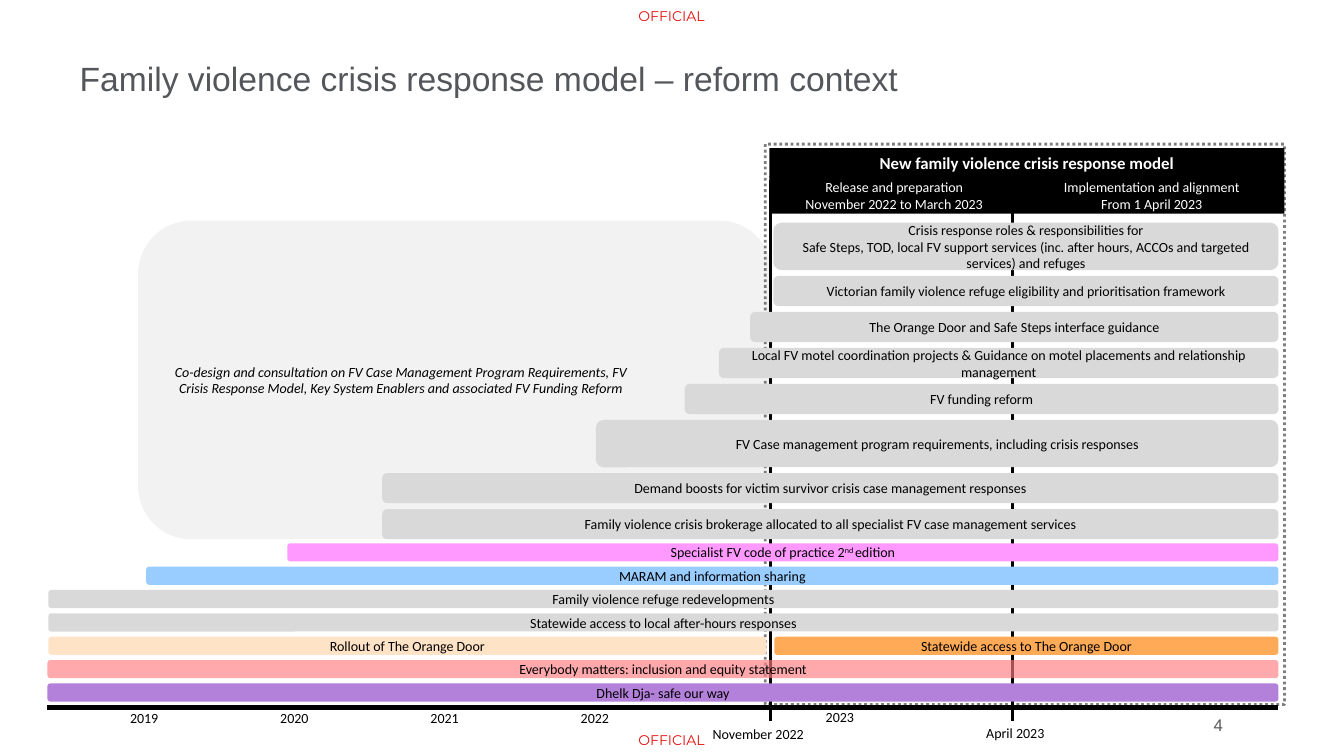
from lxml import etree
from pptx import Presentation
from pptx.dml.color import RGBColor
from pptx.enum.dml import MSO_LINE
from pptx.enum.shapes import MSO_CONNECTOR, MSO_SHAPE
from pptx.enum.text import MSO_ANCHOR, PP_ALIGN
from pptx.oxml.ns import qn
from pptx.util import Inches, Pt

RECT, ROUNDED = MSO_SHAPE.RECTANGLE, MSO_SHAPE.ROUNDED_RECTANGLE
STRAIGHT = MSO_CONNECTOR.STRAIGHT
DOTTED = MSO_LINE.ROUND_DOT
MIDDLE, TOP = MSO_ANCHOR.MIDDLE, MSO_ANCHOR.TOP
LEFT, CENTER, RIGHT = PP_ALIGN.LEFT, PP_ALIGN.CENTER, PP_ALIGN.RIGHT

COLORS = {
    "black": "000000", "white": "FFFFFF", "title": "53565A", "number": "595959",
    "official": "E4100E", "panel": "F2F2F2", "grey": "D9D9D9", "pink": "FF99FF",
    "blue": "99CCFF", "peach": "FFE3C7", "orange": "FFAA56", "red": "FF7C80",
    "purple": "B381D9",
}
BAR_RIGHT = 12.68
NOVEMBER, APRIL = 7.64, 10.04

# Each row is (height, bars); each bar is (left, right, colour, paragraphs)
REFORM_ROWS = [
    (0.47, [(7.67, BAR_RIGHT, "grey", [
        "Crisis response roles & responsibilities for",
        "Safe Steps, TOD, local FV support services (inc. after hours, "
        "ACCOs and targeted services) and refuges"])]),
    (0.3, [(7.67, BAR_RIGHT, "grey", [
        "Victorian family violence refuge eligibility and prioritisation framework"])]),
    (0.3, [(7.44, BAR_RIGHT, "grey", ["The Orange Door and Safe Steps interface guidance"])]),
    (0.3, [(7.13, BAR_RIGHT, "grey", [
        "Local FV motel coordination projects & Guidance on motel placements "
        "and relationship management"])]),
    (0.3, [(6.79, BAR_RIGHT, "grey", ["FV funding reform"])]),
    (0.47, [(5.91, BAR_RIGHT, "grey", [
        "FV Case management program requirements, including crisis responses"])]),
    (0.3, [(3.79, BAR_RIGHT, "grey", [
        "Demand boosts for victim survivor crisis case management responses"])]),
    (0.3, [(3.79, BAR_RIGHT, "grey", [
        "Family violence crisis brokerage allocated to all specialist FV "
        "case management services"])]),
]
FOUNDATION_ROWS = [
    (0.18, [(2.85, BAR_RIGHT, "pink", [
        ("Specialist FV code of practice 2", "^nd ", "edition")])]),
    (0.18, [(1.45, BAR_RIGHT, "blue", ["MARAM and information sharing"])]),
    (0.18, [(0.48, BAR_RIGHT, "grey", ["Family violence refuge redevelopments"])]),
    (0.18, [(0.48, BAR_RIGHT, "grey", ["Statewide access to local after-hours responses"])]),
    (0.18, [(0.48, 7.6, "peach", ["Rollout of The Orange Door"]),
            (7.68, BAR_RIGHT, "orange", ["Statewide access to The Orange Door"])]),
    (0.18, [(0.47, BAR_RIGHT, "red", ["Everybody matters: inclusion and equity statement"])]),
    (0.18, [(0.47, BAR_RIGHT, "purple", ["Dhelk Dja- safe our way"])]),
]


def rgb(name):
    return RGBColor.from_string(COLORS[name])


def set_alpha(paint, percent):
    """Make a solid fill or line partly transparent."""
    color = next(paint.iter(qn("a:srgbClr")))
    etree.SubElement(color, qn("a:alpha")).set("val", str(percent * 1000))


def write(shape, paragraphs, size=10, font="Calibri", color="black", bold=False,
          italic=False, align=CENTER, anchor=MIDDLE, insets=(0.1, 0.05, 0.1, 0.05)):
    """Fill a shape with text; a paragraph is a string or runs, "^" marks superscript."""
    frame = shape.text_frame
    frame.word_wrap = True
    frame.vertical_anchor = anchor
    (frame.margin_left, frame.margin_top,
     frame.margin_right, frame.margin_bottom) = map(Inches, insets)
    for index, runs in enumerate(paragraphs):
        para = frame.add_paragraph() if index else frame.paragraphs[0]
        para.alignment = align
        for text in (runs,) if isinstance(runs, str) else runs:
            span = para.add_run()
            span.text = text.lstrip("^")
            span.font.size = Pt(size)
            span.font.name = font
            span.font.bold, span.font.italic = bold, italic
            span.font.color.rgb = rgb(color)
            if text.startswith("^"):
                span.font._element.set("baseline", "30000")


def add_box(page, kind, left, top, width, height, fill=None):
    box = page.shapes.add_shape(kind, *map(Inches, (left, top, width, height)))
    box.shadow.inherit = False
    box.line.fill.background()
    if fill:
        box.fill.solid()
        box.fill.fore_color.rgb = rgb(fill)
    else:
        box.fill.background()
    return box


def add_line(page, x1, y1, x2, y2, weight):
    line = page.shapes.add_connector(STRAIGHT, *map(Inches, (x1, y1, x2, y2)))
    line.line.color.rgb = rgb("black")
    line.line.width = Pt(weight)
    etree.SubElement(line._element.spPr, qn("a:effectLst"))


def add_furniture(page):
    """Title, classification marks and page number."""
    title = page.shapes.title
    title.left, title.top, title.width, title.height = map(Inches, (0.79, 0.3, 11.76, 0.94))
    write(title, ["Family violence crisis response model – reform context"], 24,
          "Arial", "title", align=LEFT, insets=(0, 0, 0, 0))
    for top in (0, 7.19):
        mark = page.shapes.add_textbox(*map(Inches, (6.15, top, 1.02, 0.31)))
        write(mark, ["OFFICIAL"], 10, "Montserrat", "official", insets=(0, 0, 0, 0))
    number = page.shapes.add_textbox(*map(Inches, (11.42, 7.09, 0.71, 0.4)))
    write(number, ["4"], 12, "Arial", "number", align=RIGHT, anchor=TOP, insets=(0, 0, 0, 0))


def add_consultation_panel(page, left, top, width, height):
    panel = add_box(page, ROUNDED, left, top, width, height, "panel")
    write(panel, ["Co-design and consultation on FV Case Management Program Requirements, "
                  "FV Crisis Response Model, Key System Enablers and associated "
                  "FV Funding Reform"], italic=True, insets=(0.1, 0.05, 1.18, 0.05))


def add_timeline(page, left, top, right):
    """Axis with year labels and two dated milestone lines."""
    for milestone in (NOVEMBER, APRIL):
        add_line(page, milestone, 1.79, milestone, top + 0.13, 2)
    add_line(page, left, top, right, top, 4)
    labels = [(str(2019 + step), left + 0.96 + 1.49 * step, top + 0.1) for step in range(4)]
    labels += [("2023", 8.33, top + 0.09),
               ("November 2022", 7.52, top + 0.26), ("April 2023", 10.07, top + 0.25)]
    for text, center, middle in labels:
        write(add_box(page, ROUNDED, center - 0.57, middle - 0.06, 1.14, 0.12), [text])


def add_model_frame(page, left, top, width, height):
    """Dotted frame with the black heading and its two phases."""
    frame = add_box(page, RECT, left, top, width, height)
    frame.line.color.rgb = rgb("black")
    frame.line.width = Pt(2)
    frame.line.dash_style = DOTTED
    set_alpha(frame.line._get_or_add_ln(), 50)
    head_left, head_top, head_width = left + 0.04, top + 0.04, width - 0.04
    heading = add_box(page, RECT, head_left, head_top, head_width, 0.29, "black")
    write(heading, ["New family violence crisis response model"], 12, color="white", bold=True)
    split = 2.475
    phases = [
        (0, split, ["Release and preparation", "November 2022 to March 2023"]),
        (split, head_width - split, ["Implementation and alignment", "From 1 April 2023"]),
    ]
    for offset, phase_width, lines in phases:
        phase = add_box(page, RECT, head_left + offset, head_top + 0.28,
                        phase_width, 0.37, "black")
        write(phase, lines, color="white")


def add_bar_rows(page, rows, top, bottom):
    """Stack the rows from top to bottom with equal gaps."""
    gap = (bottom - top - sum(height for height, _ in rows)) / (len(rows) - 1)
    for height, bars in rows:
        for left, right, color, paragraphs in bars:
            bar = add_box(page, ROUNDED, left, top, right - left, height, color)
            if color == "red":
                set_alpha(bar._element.spPr, 65)
            write(bar, paragraphs)
        top += height + gap


def main():
    deck = Presentation()
    deck.slide_width, deck.slide_height = Inches(13.33), Inches(7.5)
    page = deck.slides.add_slide(deck.slide_layouts[5])
    add_furniture(page)
    add_consultation_panel(page, 1.37, 2.19, 6.29, 3.16)
    add_timeline(page, 0.47, 7.02, BAR_RIGHT)
    add_model_frame(page, 7.59, 1.43, 5.15, 5.56)
    add_bar_rows(page, REFORM_ROWS, 2.21, 5.35)
    add_bar_rows(page, FOUNDATION_ROWS, 5.39, 6.96)
    deck.save("out.pptx")


if __name__ == "__main__":
    main()
